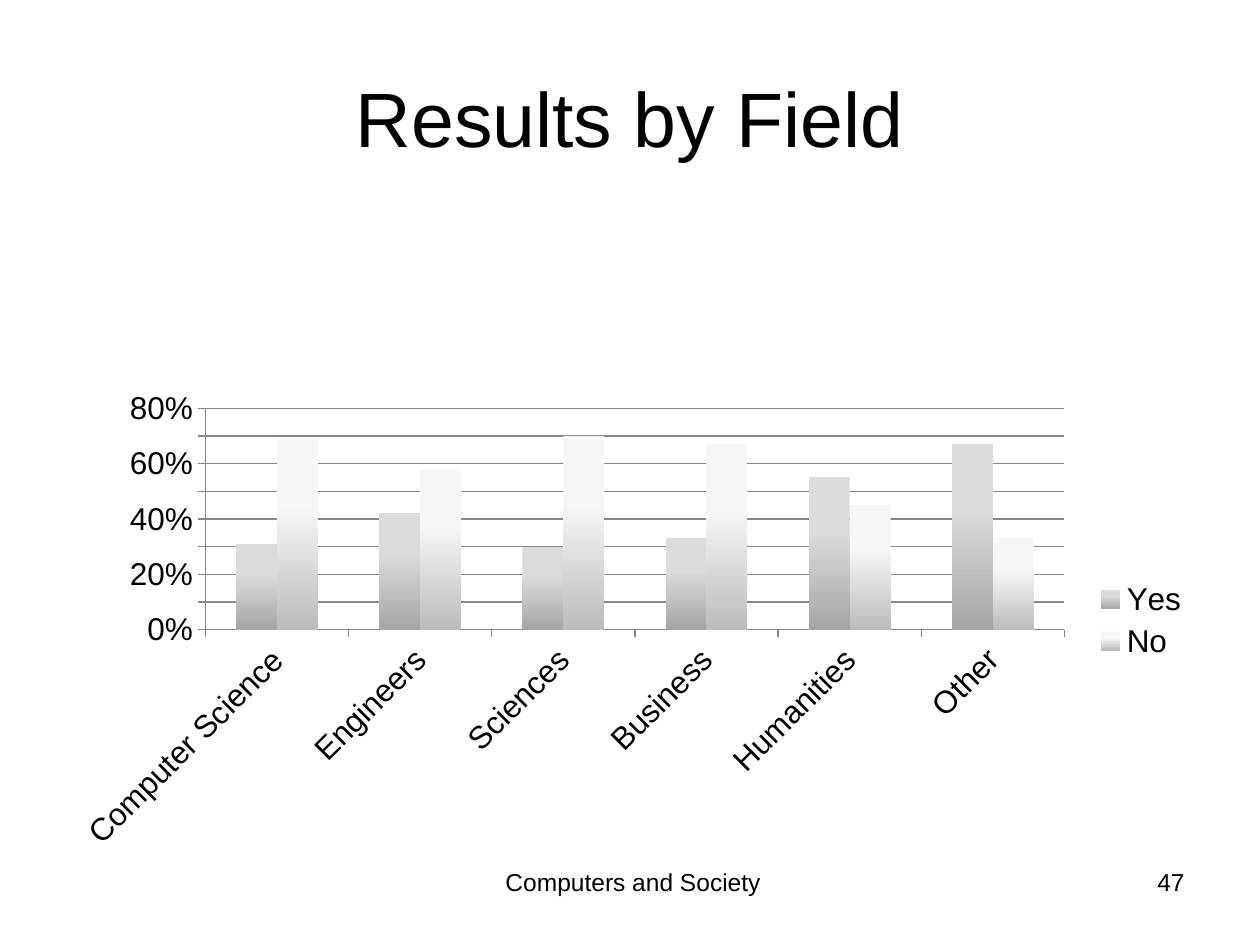
from lxml import etree
from pptx import Presentation
from pptx.chart.data import CategoryChartData
from pptx.dml.color import RGBColor
from pptx.enum.chart import XL_CHART_TYPE, XL_LEGEND_POSITION, XL_TICK_MARK
from pptx.enum.text import MSO_ANCHOR, PP_ALIGN
from pptx.oxml import parse_xml
from pptx.oxml.ns import nsdecls
from pptx.util import Cm, Pt

COLUMNS = XL_CHART_TYPE.COLUMN_CLUSTERED
LEGEND_RIGHT = XL_LEGEND_POSITION.RIGHT
TICK_OUTSIDE = XL_TICK_MARK.OUTSIDE
TOP, MIDDLE = MSO_ANCHOR.TOP, MSO_ANCHOR.MIDDLE
CENTER, RIGHT = PP_ALIGN.CENTER, PP_ALIGN.RIGHT

FONT = "Arial"
BLACK = RGBColor(0x00, 0x00, 0x00)
AXIS_GRAY = RGBColor(0x87, 0x87, 0x87)

TITLE = "Results by Field"
FOOTER = "Computers and Society"
PAGE_NUMBER = "47"
FIELDS = ["Computer Science", "Engineers", "Sciences", "Business", "Humanities", "Other"]
ANSWERS = {
    "Yes": [0.31, 0.42, 0.30, 0.33, 0.55, 0.67],
    "No": [0.69, 0.58, 0.70, 0.67, 0.45, 0.33],
}
GRADIENTS = {
    "Yes": (RGBColor(0xDB, 0xDB, 0xDB), RGBColor(0xA6, 0xA6, 0xA6)),
    "No": (RGBColor(0xF7, 0xF7, 0xF7), RGBColor(0xBC, 0xBC, 0xBC)),
}
PLOT_LAYOUT = {"x": 0.13, "y": 0.06, "w": 0.75, "h": 0.46}


def add_text(page, text, left, top, width, height, size, align, anchor=TOP):
    box = page.shapes.add_textbox(Cm(left), Cm(top), Cm(width), Cm(height))
    frame = box.text_frame
    frame.word_wrap = True
    frame.vertical_anchor = anchor
    para = frame.paragraphs[0]
    para.alignment = align
    span = para.add_run()
    span.text = text
    span.font.name = FONT
    span.font.size = Pt(size)
    span.font.color.rgb = BLACK


def style_line(line):
    line.color.rgb = AXIS_GRAY
    line.width = Pt(0.75)


def place_plot(chart):
    plot_area = chart.plots[0]._element.getparent()
    for old in plot_area.findall("{*}layout"):
        plot_area.remove(old)
    layout = parse_xml(f"<c:layout {nsdecls('c')}><c:manualLayout/></c:layout>")
    namespace = etree.QName(layout).namespace
    settings = {"layoutTarget": "inner", "xMode": "edge", "yMode": "edge", **PLOT_LAYOUT}
    for name, value in settings.items():
        etree.SubElement(layout[0], f"{{{namespace}}}{name}").set("val", str(value))
    plot_area.insert(0, layout)


def add_results_chart(page):
    data = CategoryChartData(number_format="0%")
    data.categories = FIELDS
    for name, values in ANSWERS.items():
        data.add_series(name, values)
    chart = page.shapes.add_chart(
        COLUMNS, Cm(1.14), Cm(7.65), Cm(23.09), Cm(9.7), data
    ).chart
    chart.has_title = False
    chart.font.name = FONT
    chart.font.size = Pt(18)
    chart.font.color.rgb = BLACK
    chart.has_legend = True
    chart.legend.position = LEGEND_RIGHT
    chart.legend.include_in_layout = False

    plot = chart.plots[0]
    plot.gap_width = 150
    plot.overlap = 0
    plot.vary_by_categories = False
    for series in plot.series:
        fill = series.format.fill
        fill.gradient()
        fill.gradient_angle = 270
        for stop, color, position in zip(fill.gradient_stops, GRADIENTS[series.name], (0.35, 1)):
            stop.color.rgb = color
            stop.position = position

    for axis in (chart.category_axis, chart.value_axis):
        axis.major_tick_mark = TICK_OUTSIDE
        style_line(axis.format.line)
    labels = chart.category_axis.tick_labels
    labels.font.size = Pt(18)
    chart.category_axis._element.find("{*}txPr")[0].set("rot", "-2700000")

    scale = chart.value_axis
    scale.minimum_scale, scale.maximum_scale, scale.major_unit = 0, 0.8, 0.1
    scale.tick_labels.number_format = "0%"
    scale.tick_labels.number_format_is_linked = False
    style_line(scale.major_gridlines.format.line)
    place_plot(chart)


def main():
    deck = Presentation()
    deck.slide_width, deck.slide_height = Cm(25.4), Cm(19.05)
    page = deck.slides.add_slide(deck.slide_layouts[6])
    add_text(page, TITLE, 1.27, 0.76, 22.86, 3.18, size=44, align=CENTER, anchor=MIDDLE)
    add_results_chart(page)
    add_text(page, FOOTER, 7.47, 17.35, 10.59, 1.32, size=14, align=CENTER)
    add_text(page, PAGE_NUMBER, 18.21, 17.35, 5.92, 1.32, size=14, align=RIGHT)
    deck.save("out.pptx")


if __name__ == "__main__":
    main()
